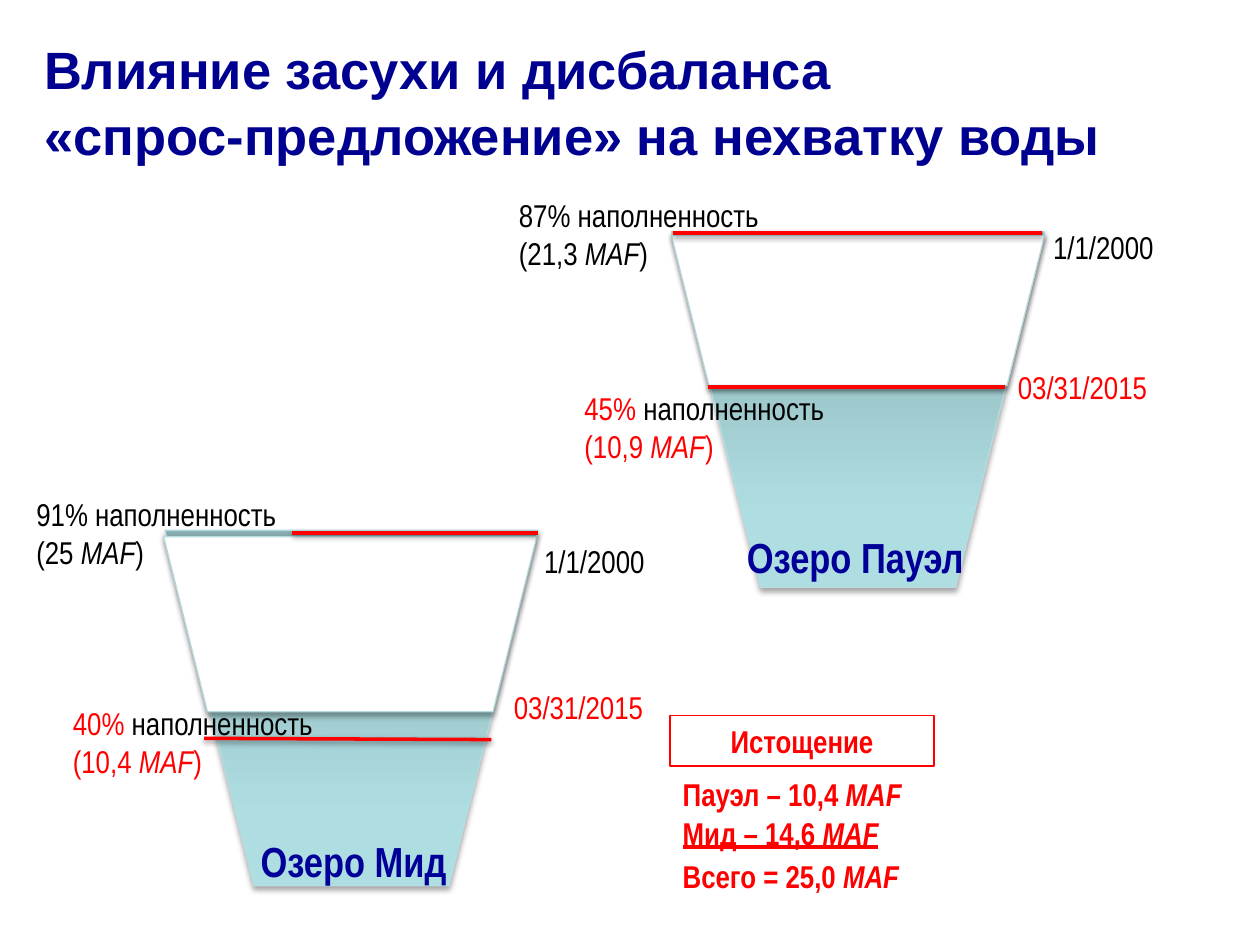
from lxml import etree
from pptx import Presentation
from pptx.dml.color import RGBColor
from pptx.enum.shapes import MSO_CONNECTOR, MSO_SHAPE
from pptx.enum.text import MSO_ANCHOR, MSO_AUTO_SIZE, PP_ALIGN
from pptx.oxml import parse_xml
from pptx.oxml.ns import qn
from pptx.util import Inches, Pt

TRAPEZOID, RECTANGLE = MSO_SHAPE.TRAPEZOID, MSO_SHAPE.RECTANGLE
STRAIGHT = MSO_CONNECTOR.STRAIGHT
LEFT, CENTER = PP_ALIGN.LEFT, PP_ALIGN.CENTER
MIDDLE = MSO_ANCHOR.MIDDLE
GROW = MSO_AUTO_SIZE.SHAPE_TO_FIT_TEXT

NS = 'xmlns:a="http://schemas.openxmlformats.org/drawingml/2006/main"'
RED, BLACK, WHITE = "FF0000", "000000", "FFFFFF"
TITLE_BLUE, NAME_BLUE, EDGE = "000090", "000099", "B6DCDF"
WATER = [(0, "87ABAE"), (80, "AFDEE2"), (100, "AFE0E4")]
NARROW = "Arial Narrow"
LAKE_W, LAKE_H = 2.96, 2.82


def rgb(color):
    return RGBColor.from_string(color)


def style(font, size, color, name=NARROW, bold=False):
    font.size, font.name, font.bold = Pt(size), name, bold
    font.color.rgb = rgb(color)


def add_shadow(shape, alpha, distance):
    effects = etree.SubElement(shape._element.spPr, qn("a:effectLst"))
    effects.append(parse_xml(
        f'<a:outerShdw {NS} blurRad="{Pt(3.1)}" dist="{Pt(distance)}" dir="5400000" '
        f'rotWithShape="0"><a:srgbClr val="{BLACK}"><a:alpha val="{alpha * 1000}"/>'
        '</a:srgbClr></a:outerShdw>'))


def fill_water(shape):
    """Three-stop gradient, dark at the surface of the flipped shape."""
    stops = "".join(f'<a:gs pos="{pos * 1000}"><a:srgbClr val="{color}"/></a:gs>'
                    for pos, color in WATER)
    gradient = parse_xml(f'<a:gradFill {NS} rotWithShape="1"><a:gsLst>{stops}</a:gsLst>'
                         '<a:lin ang="16200000" scaled="0"/></a:gradFill>')
    shape._element.spPr.find(qn("a:prstGeom")).addnext(gradient)


def add_bucket(s, x, y, h, water):
    """Upside-down trapezoid: the whole lake, or its empty part in white."""
    sp = s.shapes.add_shape(TRAPEZOID, Inches(x), Inches(y), Inches(LAKE_W), Inches(h))
    sp._element.spPr.find(qn("a:xfrm")).set("flipV", "1")
    sp.adjustments[0] = 0.25
    if water:
        fill_water(sp)
    else:
        sp.fill.solid()
        sp.fill.fore_color.rgb = rgb(WHITE)
    sp.line.color.rgb = rgb(EDGE)
    sp.line.width = Pt(0.75)
    add_shadow(sp, 35, 1.8)


def add_level(s, x1, y1, x2, y2):
    line = s.shapes.add_connector(STRAIGHT, *map(Inches, (x1, y1, x2, y2)))
    line.line.color.rgb = rgb(RED)
    line.line.width = Pt(2)
    add_shadow(line, 38, 1.6)


def add_text(s, x, y, w, h, paragraphs, size=18, bold=False, underline=False):
    """Each paragraph is a list of (text, colour) runs; the unit MAF is italic."""
    tf = s.shapes.add_textbox(*map(Inches, (x, y, w, h))).text_frame
    tf.word_wrap = False
    tf.auto_size = GROW
    for i, runs in enumerate(paragraphs):
        p = tf.add_paragraph() if i else tf.paragraphs[0]
        for text, color in runs:
            r = p.add_run()
            r.text = text
            style(r.font, size, color, bold=bold)
            r.font.italic = text == "MAF"
            r.font.underline = underline


def add_fullness(s, x, y, percent, volume, color):
    add_text(s, x, y, 2.13, 0.71, [
        [(f"{percent}% ", color), ("наполненность", BLACK)],
        [(f"({volume} ", color), ("MAF", color), (")", color)]])


def add_title(s):
    title = s.shapes.title
    title.left, title.top, title.width, title.height = map(Inches, (0.25, 0.24, 8.92, 1.11))
    tf = title.text_frame
    tf.text = "Влияние засухи и дисбаланса\n«спрос-предложение» на нехватку воды"
    tf.vertical_anchor = MIDDLE
    for p in tf.paragraphs:
        p.alignment = LEFT
        p.line_spacing = 1.05
        style(p.runs[0].font, 30, TITLE_BLUE, "Arial", True)


def add_heading(s):
    sp = s.shapes.add_shape(RECTANGLE, *map(Inches, (5.32, 5.68, 2.09, 0.4)))
    sp.shadow.inherit = False
    sp.fill.background()
    sp.line.color.rgb = rgb(RED)
    sp.line.width = Pt(1)
    sp.text_frame.text = "Истощение"
    p = sp.text_frame.paragraphs[0]
    p.alignment = CENTER
    style(p.runs[0].font, 18, RED, bold=True)


def main():
    prs = Presentation()
    prs.slide_width, prs.slide_height = Inches(10), Inches(7.5)
    s = prs.slides.add_slide(prs.slide_layouts[5])
    add_title(s)

    for x, y in [(5.33, 1.84), (1.31, 4.21)]:
        add_bucket(s, x, y, LAKE_H, water=True)
    for x, y, w, name in [(5.83, 4.17, 1.96, "Озеро Пауэл"), (1.97, 6.58, 1.7, "Озеро Мид")]:
        add_text(s, x, y, w, 0.5, [[(name, NAME_BLUE)]], size=24, bold=True)

    for x, y, w, date, color in [(4.22, 4.25, 1.17, "1/1/2000", BLACK),
                                 (8.26, 1.76, 1.17, "1/1/2000", BLACK),
                                 (3.98, 5.41, 1.42, "03/31/2015", RED),
                                 (7.98, 2.87, 1.42, "03/31/2015", RED)]:
        add_text(s, x, y, w, 0.4, [[(date, color)]])

    for fullness in [(4.02, 1.51, 87, "21,3", BLACK), (0.19, 3.88, 91, "25", BLACK),
                     (4.54, 3.04, 45, "10,9", RED), (0.48, 5.54, 40, "10,4", RED)]:
        add_fullness(s, *fullness)

    for y, w, label, underline in [(6.1, 1.97, "Пауэл – 10,4 ", False),
                                   (6.41, 1.83, "Мид – 14,6 ", True),
                                   (6.75, 1.94, "Всего = 25,0 ", False)]:
        add_text(s, 5.32, y, w, 0.4, [[(label, RED), ("MAF", RED)]],
                 bold=True, underline=underline)

    for x, y, h in [(1.3, 4.26, 1.39), (5.33, 1.87, 1.19)]:
        add_bucket(s, x, y, h, water=False)
    for level in [(1.62, 5.86, 3.9, 5.87), (5.62, 3.07, 7.98, 3.07),
                  (2.32, 4.23, 4.27, 4.23), (5.34, 1.85, 8.27, 1.85)]:
        add_level(s, *level)
    add_heading(s)
    prs.save("out.pptx")


if __name__ == "__main__":
    main()
